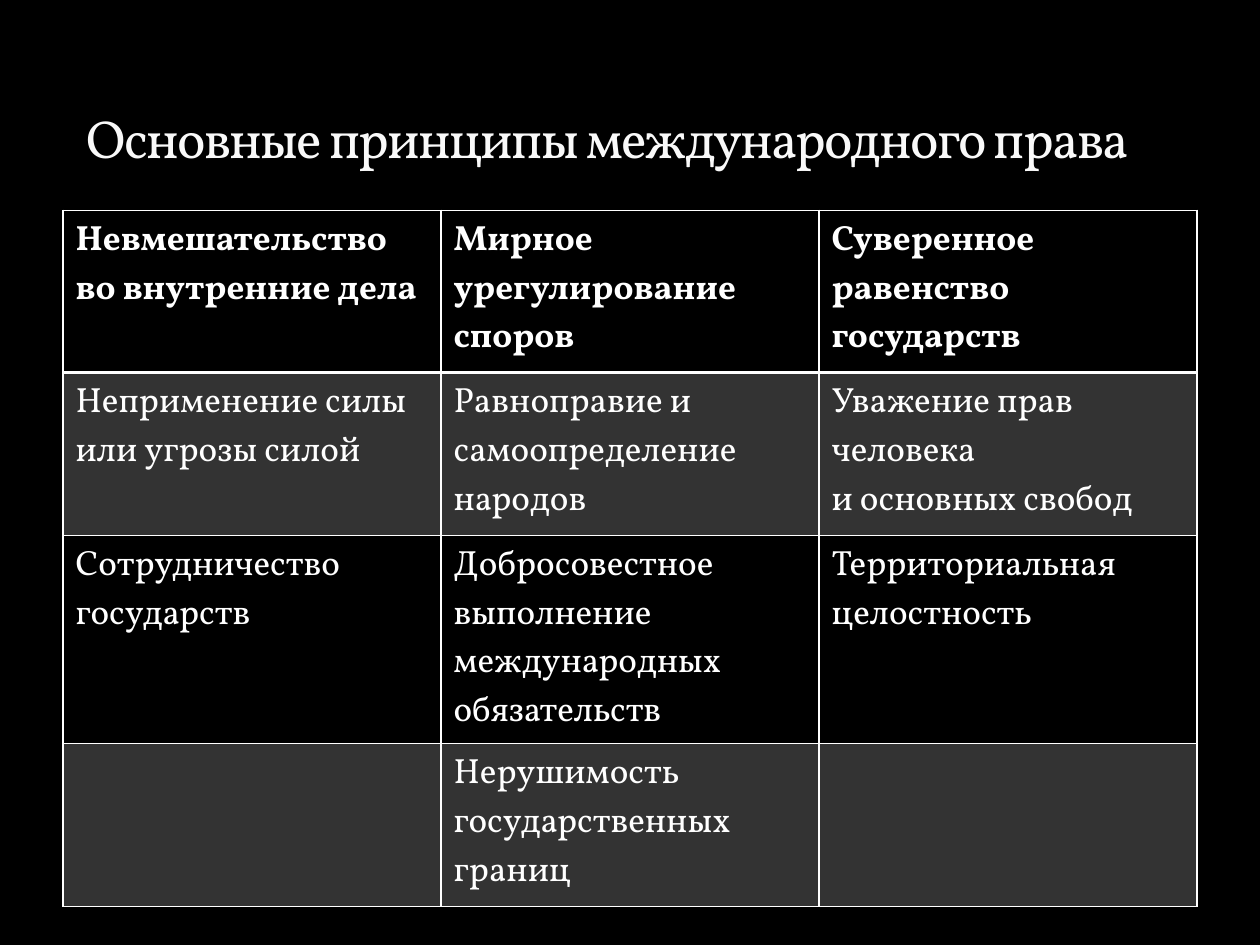
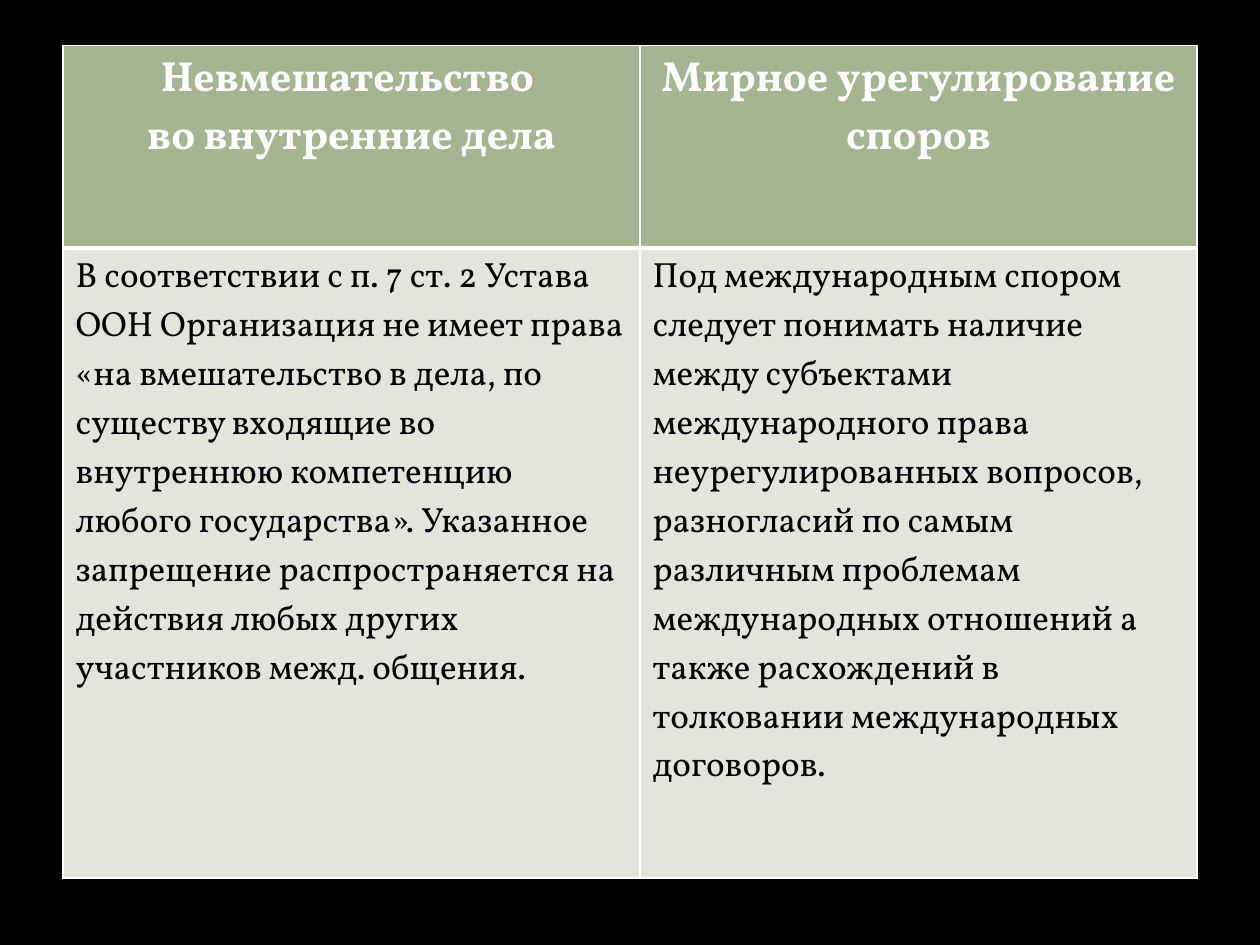
from lxml.etree import SubElement
from pptx import Presentation
from pptx.dml.color import RGBColor
from pptx.enum.text import MSO_ANCHOR as Anchor, MSO_AUTO_SIZE as AutoSize, PP_ALIGN as Align
from pptx.oxml.ns import qn
from pptx.util import Inches, Pt

FONT = "Vollkorn"
BLACK, WHITE, TITLE_COLOR = "000000", "FFFFFF", "F9F9F9"
SAGE, PALE_SAGE = "A5B592", "E1E5DC"
TABLE_LEFT, TABLE_WIDTH = 0.5, 9

PRINCIPLES = [
    ["Невмешательство\nво внутренние дела",
     "Мирное урегулирование\nспоров",
     "Суверенное равенство\nгосударств"],
    ["Неприменение силы или угрозы силой",
     "Равноправие и\nсамоопределение\nнародов",
     "Уважение прав человека\nи основных свобод"],
    ["Сотрудничество\nгосударств",
     "Добросовестное выполнение международных\nобязательств",
     "Территориальная\nцелостность"],
    ["", "Нерушимость\nгосударственных\nграниц", ""],
]
DEFINITIONS = [
    ["Невмешательство \nво внутренние дела", "Мирное урегулирование\nспоров"],
    ["В соответствии с п. 7 ст. 2 Устава ООН Организация не имеет права "
     "«на вмешательство в дела, по существу входящие во внутреннюю компетенцию "
     "любого государства». Указанное запрещение распространяется на действия "
     "любых других участников межд. общения.",
     "Под международным спором следует понимать наличие между субъектами "
     "международного права неурегулированных вопросов, разногласий по самым "
     "различным проблемам международных отношений а также расхождений в "
     "толковании международных договоров."],
]


def rgb(color):
    return RGBColor.from_string(color)


def write(para, text, size, color, bold=False):
    """Add the text as runs, with a line break at each newline."""
    for index, line in enumerate(text.split("\n")):
        if index:
            para.add_line_break()
        span = para.add_run()
        span.text = line
        span.font.name, span.font.size, span.font.bold = FONT, Pt(size), bold
        span.font.color.rgb = rgb(color)


def add_title(page, text):
    title = page.shapes.title
    title.left, title.top = Inches(0.59), Inches(0.52)
    title.width, title.height = Inches(9), Inches(0.87)
    frame = title.text_frame
    frame.auto_size, frame.vertical_anchor = AutoSize.NONE, Anchor.BOTTOM
    para = frame.paragraphs[0]
    para.alignment = Align.LEFT
    write(para, text, 30.6, TITLE_COLOR)
    for span in para.runs:
        span._r.get_or_add_rPr().set("spc", "-100")


def draw_borders(cell, top, bottom):
    """Draw white cell borders; call before filling, as the schema orders them."""
    for side, width in (("L", 1), ("R", 1), ("T", top), ("B", bottom)):
        line = SubElement(cell._tc.get_or_add_tcPr(), qn(f"a:ln{side}"), w=str(Pt(width)))
        SubElement(SubElement(line, qn("a:solidFill")), qn("a:srgbClr"), val=WHITE)


def fill_cell(cell, color, opacity=100):
    if color is None:
        cell.fill.background()
        return
    cell.fill.solid()
    cell.fill.fore_color.rgb = rgb(color)
    if opacity < 100:
        tint = cell._tc.tcPr.find(f".//{qn('a:solidFill')}[last()]")
        tint = cell._tc.tcPr.findall(qn("a:solidFill"))[0][0]
        SubElement(tint, qn("a:alpha"), val=str(opacity * 1000))


def add_grid(page, rows, top, widths, heights, rule, style):
    """Add a table; style(row) gives fill, opacity, text size, color, alignment."""
    table = page.shapes.add_table(
        len(rows), len(widths), Inches(TABLE_LEFT), Inches(top),
        Inches(TABLE_WIDTH), Inches(sum(heights))).table
    table.horz_banding = False
    for column, width in zip(table.columns, widths):
        column.width = Inches(width)
    for r, texts in enumerate(rows):
        table.rows[r].height = Inches(heights[r])
        fill, opacity, size, color, alignment = style(r)
        for c, text in enumerate(texts):
            cell = table.cell(r, c)
            draw_borders(cell, rule if r == 1 else 1, rule if r == 0 else 1)
            fill_cell(cell, fill, opacity)
            if text:
                para = cell.text_frame.paragraphs[0]
                para.alignment = alignment
                write(para, text, size, color, bold=r == 0)


def principle_style(row):
    return (WHITE if row % 2 else None), 20, 20, WHITE, Align.LEFT


def definition_style(row):
    if row == 0:
        return SAGE, 100, 24, WHITE, Align.CENTER
    return PALE_SAGE, 100, 20, BLACK, Align.LEFT


def main():
    deck = Presentation()
    deck.slide_width, deck.slide_height = Inches(10), Inches(7.5)
    backdrop = deck.slide_master.background.fill
    backdrop.solid()
    backdrop.fore_color.rgb = rgb(BLACK)

    page = deck.slides.add_slide(deck.slide_layouts[5])
    add_title(page, "Основные принципы международного права")
    add_grid(page, PRINCIPLES, 1.67, [TABLE_WIDTH / 3] * 3, [1.29] * 4, 2, principle_style)

    page = deck.slides.add_slide(deck.slide_layouts[6])
    add_grid(page, DEFINITIONS, 0.36, [4.58, 4.42], [1.61, 5], 3, definition_style)

    deck.save("out.pptx")


if __name__ == "__main__":
    main()
